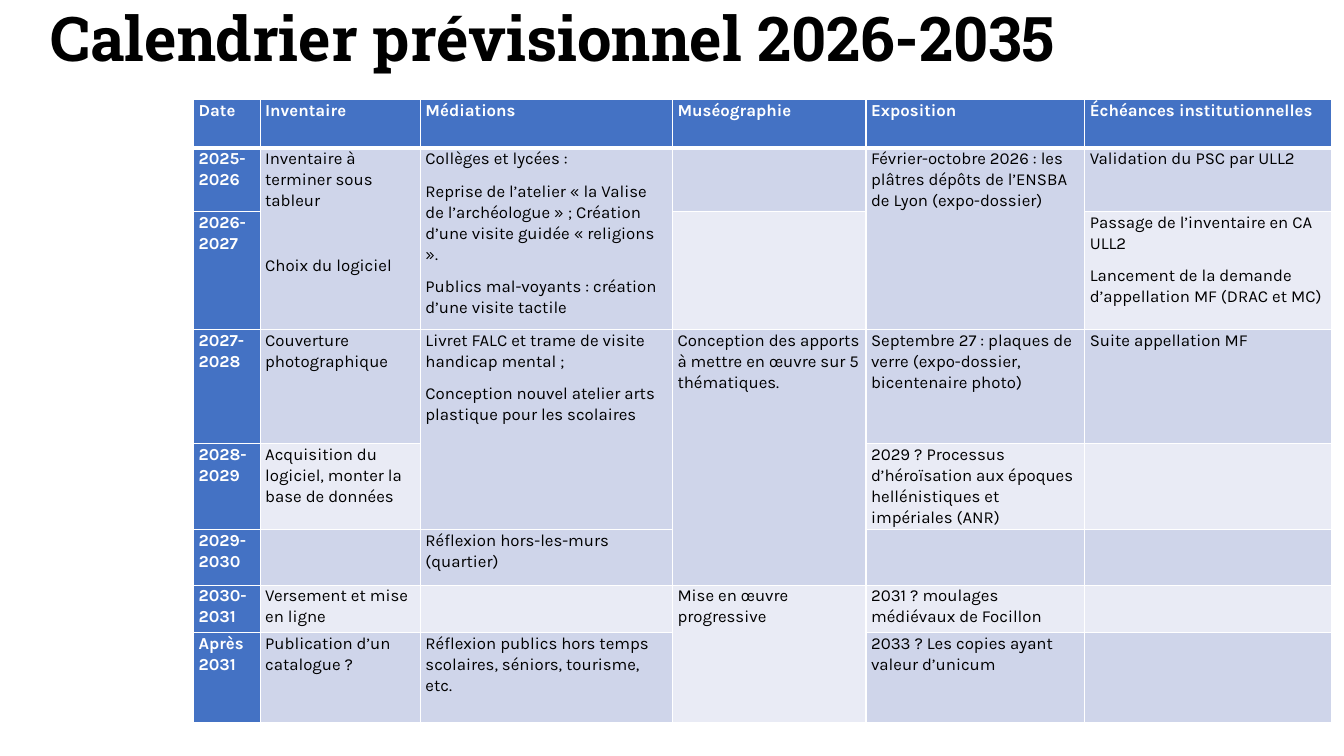
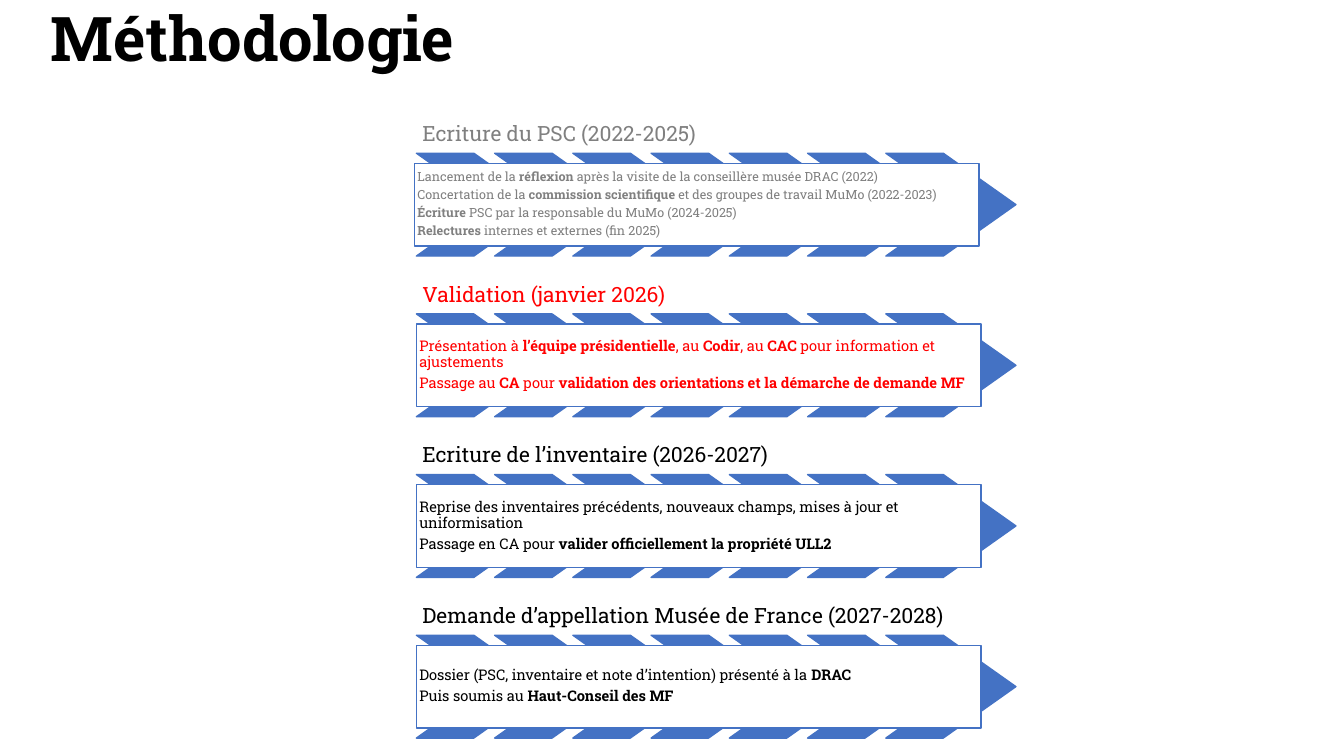
"""Build the museum planning slides: a calendar table and a list of method steps."""
from lxml import etree
from pptx import Presentation
from pptx import util as u
from pptx.dml.color import RGBColor
from pptx.enum import shapes, text
from pptx.oxml import ns

INK = {"blue": "4472C4", "band": "CFD5EA", "pale": "E9EBF5", "white": "FFFFFF",
       "black": "000000", "grey": "808080", "red": "FF0000"}
SLAB, KARLA = "Roboto Slab", "Karla"
WIDE, HIGH = 13.33, 7.5

COLS = [0.66, 1.59, 2.5, 1.92, 2.17, 2.45]
ROWS = [0.48, 0.63, 1.17, 1.13, 0.85, 0.55, 0.47, 0.89]
HEAD = ["Date", "Inventaire", "Médiations", "Muséographie", "Exposition",
        "Échéances institutionnelles"]
DATES = ["2025-2026", "2026-2027", "2027-2028", "2028-2029", "2029-2030",
         "2030-2031", "Après 2031"]
SPANS = {(1, 1): 2, (1, 2): 2, (1, 4): 2, (3, 2): 2, (3, 3): 3, (6, 3): 2}
GAPS = {"Choix du logiciel": 23}
PLANS = {
    (1, 1): ["Inventaire à terminer sous tableur", "Choix du logiciel"],
    (1, 2): ["Collèges et lycées :",
             "Reprise de l’atelier « la Valise de l’archéologue » ; "
             "Création d’une visite guidée « religions ».",
             "Publics mal-voyants : création d’une visite tactile"],
    (1, 4): ["Février-octobre 2026 : les plâtres dépôts de l’ENSBA de Lyon (expo-dossier)"],
    (1, 5): ["Validation du PSC par ULL2"],
    (2, 5): ["Passage de l’inventaire en CA ULL2",
             "Lancement de la demande d’appellation MF (DRAC et MC)"],
    (3, 1): ["Couverture photographique"],
    (3, 2): ["Livret FALC et trame de visite handicap mental ;",
             "Conception nouvel atelier arts plastique pour les scolaires"],
    (3, 3): ["Conception des apports à mettre en œuvre sur 5 thématiques."],
    (3, 4): ["Septembre 27 : plaques de verre (expo-dossier, bicentenaire photo)"],
    (3, 5): ["Suite appellation MF"],
    (4, 1): ["Acquisition du logiciel, monter la base de données"],
    (4, 4): ["2029 ? Processus d’héroïsation aux époques hellénistiques et impériales (ANR)"],
    (5, 2): ["Réflexion hors-les-murs (quartier)"],
    (6, 1): ["Versement et mise en ligne"],
    (6, 3): ["Mise en œuvre progressive"],
    (6, 4): ["2031 ? moulages médiévaux de Focillon"],
    (7, 1): ["Publication d’un catalogue ?"],
    (7, 2): ["Réflexion publics hors temps scolaires, séniors, tourisme, etc."],
    (7, 4): ["2033 ? Les copies ayant valeur d’unicum"],
}

STEPS = [
    ("Ecriture du PSC (2022-2025)", "grey", 9, 4.11,
     ["Lancement de la *réflexion *après la visite de la conseillère musée DRAC (2022)",
      "Concertation de la *commission scientifique *et des groupes de travail MuMo (2022-2023)",
      "*Écriture *PSC par la responsable du MuMo (2024-2025)",
      "*Relectures* internes et externes (fin 2025)"]),
    ("Validation (janvier 2026)", "red", 10.5, 4.13,
     ["Présentation à *l’équipe présidentielle*, au *Codir*, au *CAC* "
      "pour information et ajustements",
      "Passage au *CA* pour *validation des orientations et la démarche de demande MF*"]),
    ("Ecriture de l’inventaire (2026-2027)", "black", 10.5, 4.13,
     ["Reprise des inventaires précédents, nouveaux champs, mises à jour et uniformisation",
      "Passage en CA pour *valider officiellement la propriété ULL2*"]),
    ("Demande d’appellation Musée de France (2027-2028)", "black", 10.5, 4.13,
     ["Dossier (PSC, inventaire et note d’intention) présenté à la *DRAC*",
      "Puis soumis au *Haut-Conseil des MF*"]),
]
LEFT, TOP, PITCH = 4.13, 1.01, 1.594
CHEVS, SHIFT = 7, 0.776


def tint(name):
    """Return the named colour."""
    return RGBColor.from_string(INK[name])


def style(font, face, size, ink, bold=False):
    """Set face, size, colour and weight of a font."""
    font.name, font.size, font.bold = face, u.Pt(size), bold
    font.color.rgb = tint(ink)


def inset(box, side, end):
    """Set the margins of a text frame or a cell."""
    box.margin_left = box.margin_right = u.Inches(side)
    box.margin_top = box.margin_bottom = u.Inches(end)


def write(frame, lines, face, size, ink, bold, lead, after):
    """Write paragraphs, where stars switch bold on and off."""
    for i, line in enumerate(lines):
        para = frame.paragraphs[0] if i == 0 else frame.add_paragraph()
        para.alignment = text.PP_ALIGN.LEFT
        para.line_spacing, para.space_after = lead, u.Pt(after)
        if line in GAPS:
            para.space_before = u.Pt(GAPS[line])
        for j, part in enumerate(line.split("*")):
            if part:
                run = para.add_run()
                run.text = part
                style(run.font, face, size, ink, bold or j % 2 == 1)


def new_slide(deck, title, wide):
    """Add a title-only slide and set its heading."""
    slide = deck.slides.add_slide(deck.slide_layouts[5])
    head = slide.shapes.title
    head.left, head.top = u.Inches(0.03 * WIDE), u.Inches(-0.05)
    head.width, head.height = u.Inches(wide), u.Inches(0.84)
    frame = head.text_frame
    frame.text = title
    frame.word_wrap = False
    frame.auto_size = text.MSO_AUTO_SIZE.SHAPE_TO_FIT_TEXT
    frame.vertical_anchor = text.MSO_ANCHOR.TOP
    frame.paragraphs[0].alignment = text.PP_ALIGN.LEFT
    style(frame.paragraphs[0].runs[0].font, SLAB, 44, "black", True)
    return slide


def edge(cell, top, base):
    """Draw white borders around a cell, with its top and base widths."""
    props = cell._tc.get_or_add_tcPr()
    for i, (tag, size) in enumerate([("L", 1), ("R", 1), ("T", top), ("B", base)]):
        line = etree.Element(ns.qn(f"a:ln{tag}"), w=str(u.Pt(size)))
        fill = etree.SubElement(line, ns.qn("a:solidFill"))
        etree.SubElement(fill, ns.qn("a:srgbClr"), val=INK["white"])
        props.insert(i, line)


def fill_cell(cell, row, col):
    """Colour a calendar cell by its place and write its text."""
    head = row == 0 or col == 0
    if row == 0:
        lines = [HEAD[col]]
    elif col == 0:
        lines = [DATES[row - 1]]
    else:
        lines = PLANS.get((row, col), [])
    cell.fill.solid()
    cell.fill.fore_color.rgb = tint("blue" if head else "band" if row % 2 else "pale")
    inset(cell, 0.05, 0)
    edge(cell, 3 if row == 1 else 1, 1 if row else 3)
    write(cell.text_frame, lines, KARLA, 12, "white" if head else "black", head, 1.07, 8)
    if not lines:
        cell.text_frame.paragraphs[0].font.size = u.Pt(12)


def add_plan(slide):
    """Add the calendar table."""
    grid = slide.shapes.add_table(len(ROWS), len(COLS), u.Inches(1.92), u.Inches(0.99),
                                  u.Inches(sum(COLS)), u.Inches(sum(ROWS))).table
    for col, wide in zip(grid.columns, COLS):
        col.width = u.Inches(wide)
    for row, high in zip(grid.rows, ROWS):
        row.height = u.Inches(high)
    for row in range(len(ROWS)):
        for col in range(len(COLS)):
            fill_cell(grid.cell(row, col), row, col)
    for (row, col), span in SPANS.items():
        grid.cell(row, col).merge(grid.cell(row + span - 1, col))


def add_block(slide, kind, left, top, wide, high, ink):
    """Add a filled shape with a thin blue line."""
    block = slide.shapes.add_shape(kind, *map(u.Inches, (left, top, wide, high)))
    block.shadow.inherit = False
    block.fill.solid()
    block.fill.fore_color.rgb = tint(ink)
    block.line.color.rgb = tint("blue")
    block.line.width = u.Pt(1)
    return block


def add_step(slide, top, name, ink, size, left, lines):
    """Add a step: its name, a row of chevrons and a framed text."""
    label = slide.shapes.add_textbox(*map(u.Inches, (LEFT, top, 5.53, 0.5))).text_frame
    label.word_wrap = True
    label.vertical_anchor = text.MSO_ANCHOR.BOTTOM
    inset(label, 0.06, 0.06)
    write(label, [name], SLAB, 15, ink, False, 0.9, 0)
    for i in range(CHEVS):
        chev = add_block(slide, shapes.MSO_SHAPE.CHEVRON, LEFT + i * SHIFT,
                         top + 0.51, 1.29, 1.02, "blue")
        chev.adjustments[0] = 0.706
    card = add_block(slide, shapes.MSO_SHAPE.RECTANGLE, left, top + 0.61, 5.6, 0.82, "white")
    frame = card.text_frame
    frame.word_wrap = True
    frame.vertical_anchor = text.MSO_ANCHOR.MIDDLE
    inset(frame, 0.03, 0.03)
    write(frame, lines, SLAB, size, ink, False, 0.9, 0.35 * size)


def main():
    """Build and save the deck."""
    deck = Presentation()
    deck.slide_width, deck.slide_height = u.Inches(WIDE), u.Inches(HIGH)
    add_plan(new_slide(deck, "Calendrier prévisionnel 2026-2035", 10.59))
    slide = new_slide(deck, "Méthodologie", 4.42)
    for i, step in enumerate(STEPS):
        add_step(slide, TOP + i * PITCH, *step)
    deck.save("out.pptx")


if __name__ == "__main__":
    main()
